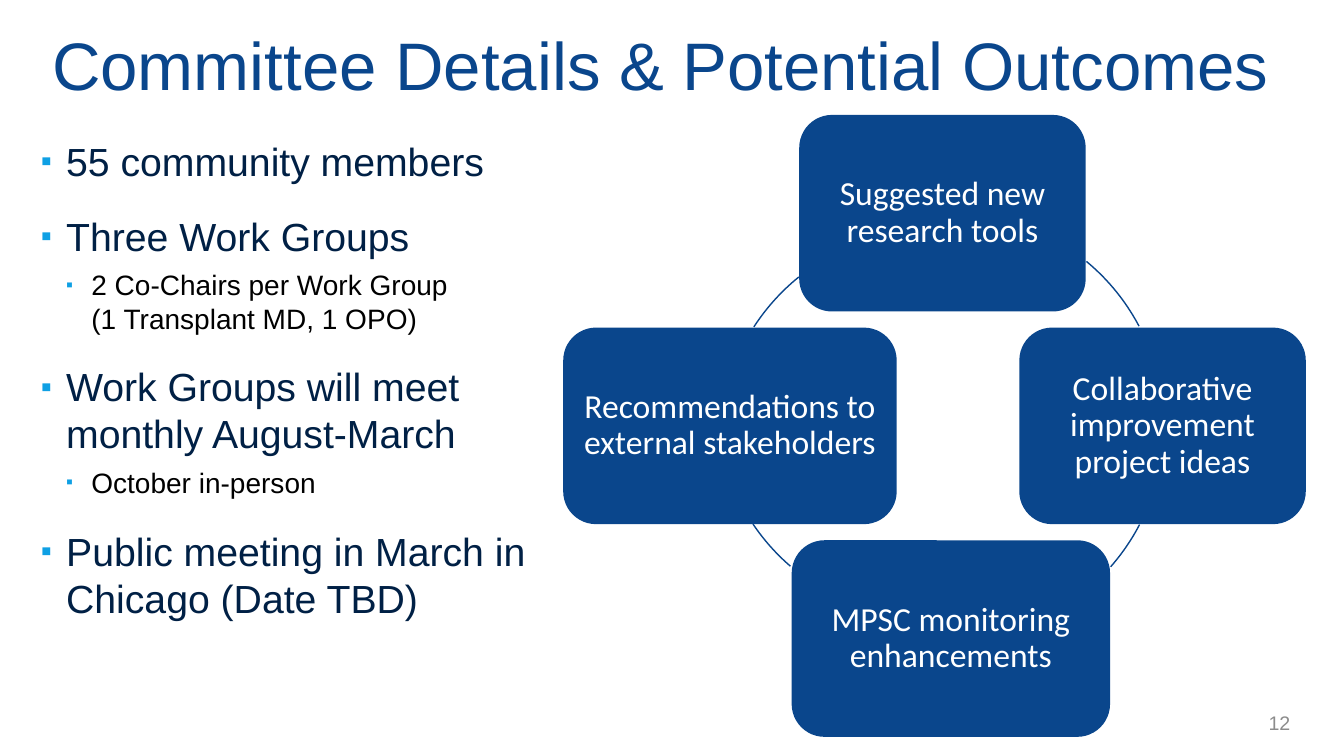
from dataclasses import dataclass

from lxml import etree
from pptx import Presentation
from pptx.dml.color import RGBColor
from pptx.enum.shapes import MSO_SHAPE
from pptx.enum.text import MSO_ANCHOR, PP_ALIGN
from pptx.oxml.ns import qn
from pptx.util import Inches, Pt

ROUNDED, ARC = MSO_SHAPE.ROUNDED_RECTANGLE, MSO_SHAPE.ARC
MIDDLE, TOP = MSO_ANCHOR.MIDDLE, MSO_ANCHOR.TOP
LEFT, CENTER, RIGHT = PP_ALIGN.LEFT, PP_ALIGN.CENTER, PP_ALIGN.RIGHT

NAVY, INK, SKY = "0A468C", "002045", "0FA0E4"
BLACK, WHITE, GRAY = "000000", "FFFFFF", "8C8C8C"

# The page is a grid of square cells, 160 columns by 90 rows
COLUMNS, ROWS = 160, 90
deck = Presentation()
deck.slide_width, deck.slide_height = Inches(13.333), Inches(7.5)
CELL = deck.slide_height / ROWS

# Outcome cycle, in cells
MID_ROW, RADIUS = 50.7, 25.32
BOX_ROWS = 23.4


@dataclass
class Bullet:
    lines: tuple[str, ...]
    level: int = 0


@dataclass
class BulletStyle:
    size: int
    color: str
    indent: float
    space: int
    mark_percent: int


@dataclass
class Outcome:
    text: str
    column: float
    step: int
    columns: float


@dataclass
class Link:
    column: float
    row: float
    start: float
    end: float


BULLETS = [
    Bullet(("55 community members",)),
    Bullet(("Three Work Groups",)),
    Bullet(("2 Co-Chairs per Work Group", "(1 Transplant MD, 1 OPO)"), 1),
    Bullet(("Work Groups will meet", "monthly August-March")),
    Bullet(("October in-person",), 1),
    Bullet(("Public meeting in March in Chicago (Date TBD)",)),
]
STYLES = [BulletStyle(28, INK, 0.25, 20, 80), BulletStyle(20, BLACK, 0.5, 6, 70)]

# Centre column, steps of one radius from the middle row, and width
OUTCOMES = [
    Outcome("Suggested new research tools", 112.2, -1, 34.1),
    Outcome("Collaborative improvement project ideas", 138.4, 0, 34.1),
    Outcome("MPSC monitoring enhancements", 113.2, 1, 37.9),
    Outcome("Recommendations to external stakeholders", 86.9, 0, 39.7),
]
# Circle centre, then clockwise angles in degrees
LINKS = [
    Link(113.2, 50.64, 309.6, 332.2),
    Link(113.2, 50.76, 27.5, 41.3),
    Link(110.64, 48.24, 130.8, 146),
    Link(111, 52.68, 212.9, 231.1),
]


def rgb(color: str) -> RGBColor:
    return RGBColor.from_string(color)


def cells(*counts: float) -> list[int]:
    return [round(count * CELL) for count in counts]


def add_span(para, text: str, size: int, color: str, font: str = "Arial") -> None:
    span = para.add_run()
    span.text = text
    span.font.size, span.font.name = Pt(size), font
    span.font.color.rgb = rgb(color)


def set_frame(frame, anchor=MIDDLE):
    frame.word_wrap = True
    frame.vertical_anchor = anchor
    return frame.paragraphs[0]


def set_bullet(para, style: BulletStyle) -> None:
    props = para._p.get_or_add_pPr()
    props.set("marL", str(Inches(style.indent)))
    props.set("indent", str(Inches(-0.25)))
    tint = etree.SubElement(props, qn("a:buClr"))
    etree.SubElement(tint, qn("a:srgbClr"), val=SKY)
    etree.SubElement(props, qn("a:buSzPct"), val=str(style.mark_percent * 1000))
    etree.SubElement(props, qn("a:buFont"), typeface="Arial")
    etree.SubElement(props, qn("a:buChar"), char="▪")


def add_bullets(page) -> None:
    box = page.shapes.add_textbox(*cells(3.7, 15.7, 76.7, 69.2))
    para = set_frame(box.text_frame, TOP)
    for index, bullet in enumerate(BULLETS):
        style = STYLES[bullet.level]
        if index:
            para = box.text_frame.add_paragraph()
            para.space_before = Pt(style.space)
        para.level = bullet.level
        set_bullet(para, style)
        for number, line in enumerate(bullet.lines):
            if number:
                para.add_line_break()
            add_span(para, line, style.size, style.color)


def add_link(page, link: Link) -> None:
    arc = page.shapes.add_shape(
        ARC, *cells(link.column - RADIUS, link.row - RADIUS, 2 * RADIUS, 2 * RADIUS))
    arc.shadow.inherit = False
    # Angles are stored in 60000ths of a degree, adjustments in 100000ths
    arc.adjustments[0], arc.adjustments[1] = link.start * 0.6, link.end * 0.6
    arc.fill.background()
    arc.line.color.rgb, arc.line.width = rgb(NAVY), Pt(1)


def add_outcome(page, outcome: Outcome) -> None:
    row = MID_ROW + outcome.step * RADIUS
    box = page.shapes.add_shape(ROUNDED, *cells(
        outcome.column - outcome.columns / 2, row - BOX_ROWS / 2,
        outcome.columns, BOX_ROWS))
    box.shadow.inherit = False
    box.fill.solid()
    box.fill.fore_color.rgb = rgb(NAVY)
    box.line.fill.background()
    frame = box.text_frame
    frame.margin_left = frame.margin_right = Inches(0.1)
    para = set_frame(frame)
    para.alignment, para.line_spacing = CENTER, 0.9
    add_span(para, outcome.text, 24, WHITE, "Calibri")


def main() -> None:
    page = deck.slides.add_slide(deck.slide_layouts[5])

    # Title
    title = page.shapes.title
    title.left, title.top, title.width, title.height = cells(5, 2, 153, 11.2)
    para = set_frame(title.text_frame)
    para.alignment = LEFT
    add_span(para, "Committee Details & Potential Outcomes", 48, NAVY)

    # Committee details
    add_bullets(page)

    # Outcome cycle
    for link in LINKS:
        add_link(page, link)
    for outcome in OUTCOMES:
        add_outcome(page, outcome)

    # Page number
    number = page.shapes.add_textbox(*cells(127.7, 83.6, 27.1, 4.8))
    para = set_frame(number.text_frame)
    para.alignment = RIGHT
    add_span(para, "12", 14, GRAY)

    deck.save("out.pptx")


if __name__ == "__main__":
    main()
